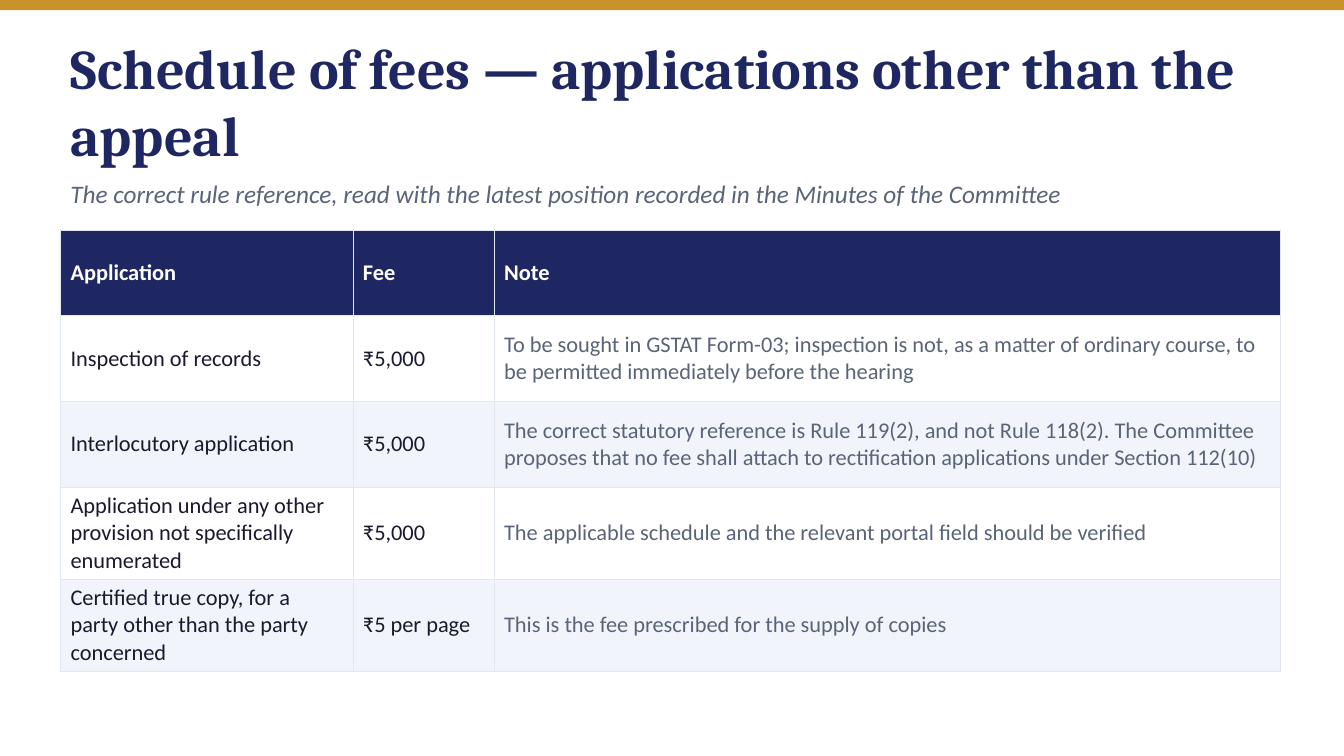
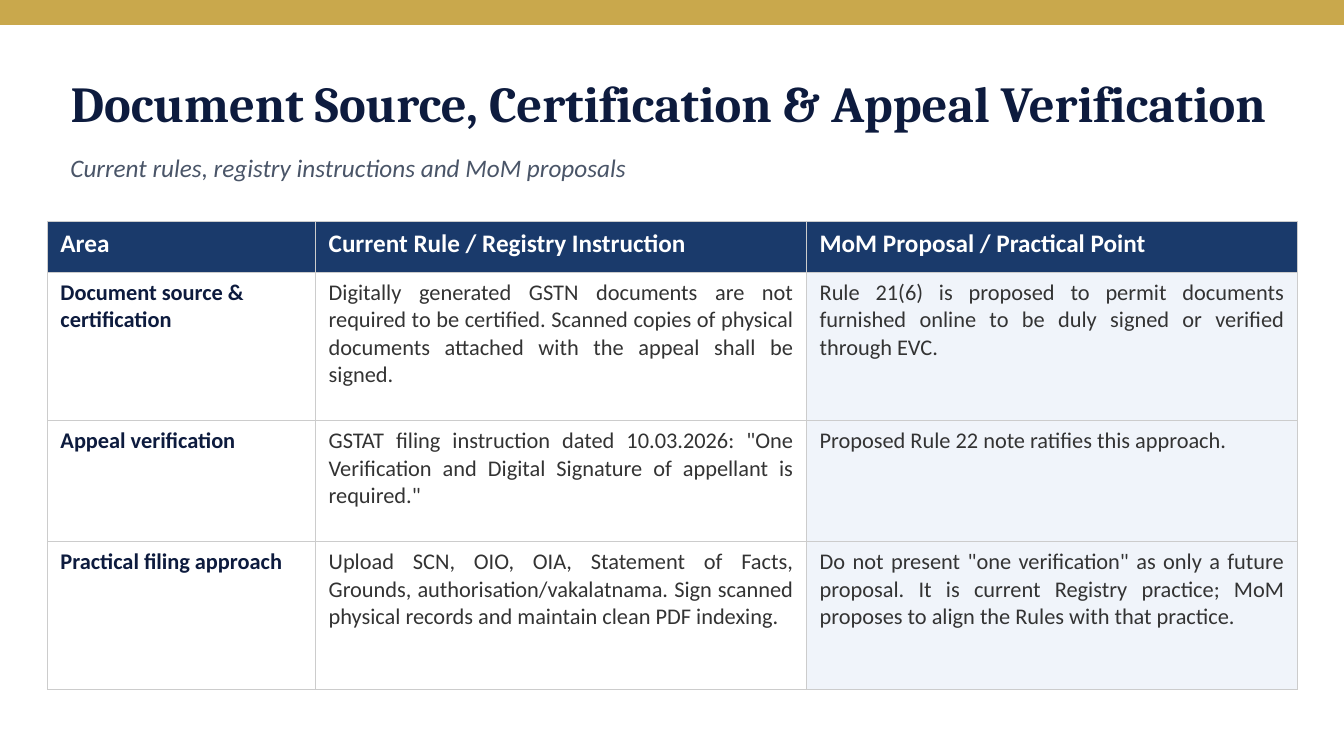
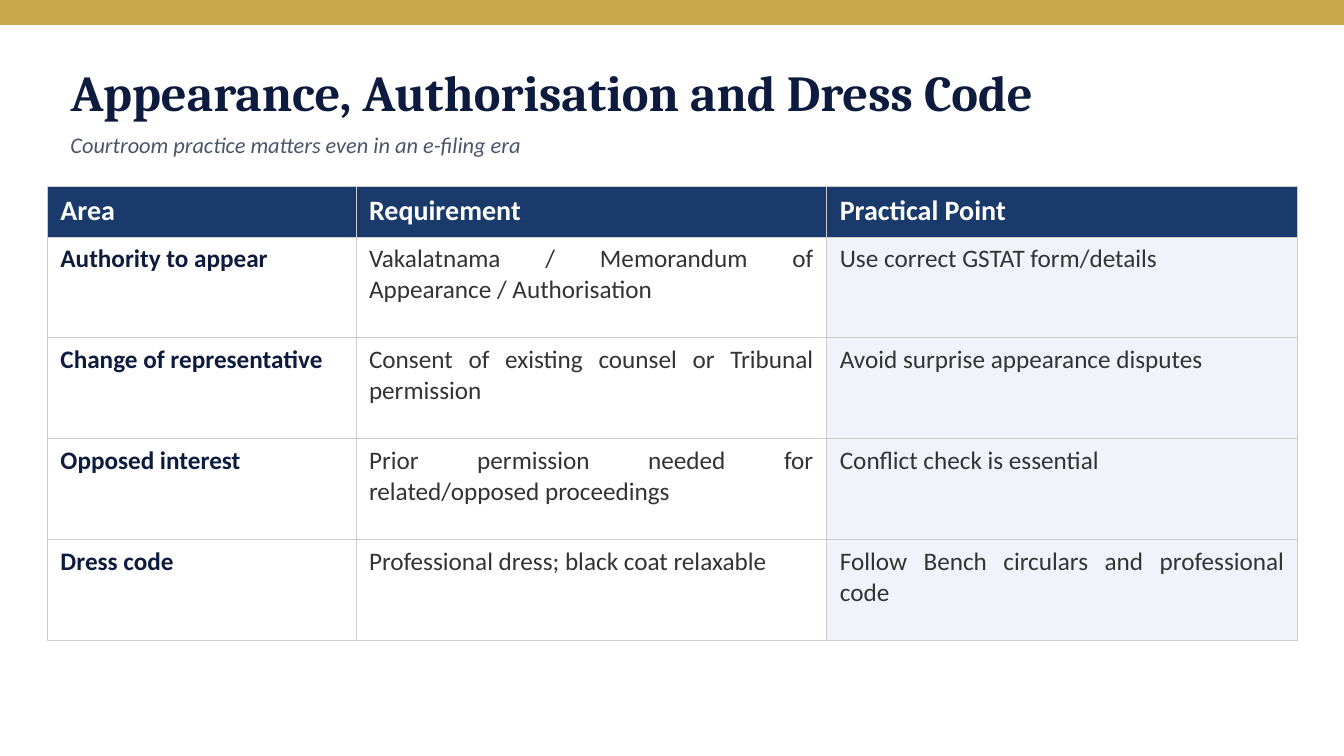
from dataclasses import dataclass, replace

from lxml.etree import SubElement
from pptx import Presentation
from pptx.dml.color import RGBColor
from pptx.enum.shapes import MSO_SHAPE
from pptx.enum.text import MSO_ANCHOR, MSO_AUTO_SIZE, PP_ALIGN
from pptx.oxml.ns import qn
from pptx.util import Inches, Pt

SLIDE_WIDTH, SLIDE_HEIGHT = 13.33, 7.5
TITLE_ONLY_LAYOUT = 5


@dataclass(frozen=True)
class Style:
    band: str
    band_height: float
    band_outlined: bool
    title: str
    subtitle: str
    header: str
    label: str
    body: str
    shade: str
    border: str
    title_size: int
    subtitle_size: int
    header_size: int
    body_size: int
    label_columns: int
    label_bold: bool
    shade_rows: bool
    body_align: PP_ALIGN
    cell_anchor: MSO_ANCHOR
    cell_margins: tuple


@dataclass(frozen=True)
class Theme:
    heading_font: str
    body_font: str
    light: str
    schedule: Style
    guidance: Style
    guidance_large: Style


GUIDANCE = Style(
    band="C9A84C", band_height=0.24, band_outlined=True,
    title="0D1B3E", subtitle="4A5568", header="1A3A6B",
    label="0D1B3E", body="333333", shade="F0F4FA", border="CCCCCC",
    title_size=36, subtitle_size=18, header_size=18, body_size=16,
    label_columns=1, label_bold=True, shade_rows=False,
    body_align=PP_ALIGN.JUSTIFY, cell_anchor=MSO_ANCHOR.TOP,
    cell_margins=(0.13, 0.07),
)

THEME = Theme(
    heading_font="Cambria",
    body_font="Calibri",
    light="FFFFFF",
    schedule=Style(
        band="C8932A", band_height=0.1, band_outlined=False,
        title="1E2761", subtitle="5A6478", header="1E2761",
        label="1A1A2E", body="5A6478", shade="F2F4FB", border="E2E8F0",
        title_size=40, subtitle_size=18, header_size=16, body_size=16,
        label_columns=2, label_bold=False, shade_rows=True,
        body_align=PP_ALIGN.LEFT, cell_anchor=MSO_ANCHOR.MIDDLE,
        cell_margins=(0.1, 0.05),
    ),
    guidance=GUIDANCE,
    guidance_large=replace(GUIDANCE, subtitle_size=16, header_size=20, body_size=18),
)


def set_fill(fill, colour):
    fill.solid()
    fill.fore_color.rgb = RGBColor.from_string(colour)


def write_text(text_frame, text, font_name, size, colour,
               bold=False, italic=False, align=PP_ALIGN.LEFT):
    text_frame.text = text
    text_frame.word_wrap = True
    paragraph = text_frame.paragraphs[0]
    paragraph.alignment = align
    font = paragraph.runs[0].font
    font.name, font.size = font_name, Pt(size)
    font.bold, font.italic = bold, italic
    font.color.rgb = RGBColor.from_string(colour)


def set_borders(cell, colour):
    """Draw a half-point line on all four sides; lines must precede the fill."""
    properties = cell._tc.get_or_add_tcPr()
    for index, side in enumerate(("a:lnL", "a:lnR", "a:lnT", "a:lnB")):
        line = properties.makeelement(qn(side), {"w": str(Pt(0.5))})
        solid = SubElement(line, qn("a:solidFill"))
        SubElement(solid, qn("a:srgbClr"), val=colour)
        properties.insert(index, line)


def add_band(slide, style):
    band = slide.shapes.add_shape(
        MSO_SHAPE.RECTANGLE, 0, 0, Inches(SLIDE_WIDTH), Inches(style.band_height))
    band.shadow.inherit = False
    set_fill(band.fill, style.band)
    if style.band_outlined:
        set_fill(band.line.fill, style.band)
        band.line.width = Pt(1)
    else:
        band.line.fill.background()


def add_heading(slide, style, title, title_box, subtitle, subtitle_box):
    title_shape = slide.shapes.title
    (title_shape.left, title_shape.top,
     title_shape.width, title_shape.height) = map(Inches, title_box)
    subtitle_shape = slide.shapes.add_textbox(*map(Inches, subtitle_box))
    write_text(title_shape.text_frame, title, THEME.heading_font,
               style.title_size, style.title, bold=True)
    write_text(subtitle_shape.text_frame, subtitle, THEME.body_font,
               style.subtitle_size, style.subtitle, italic=True)
    for shape in (title_shape, subtitle_shape):
        shape.text_frame.auto_size = MSO_AUTO_SIZE.NONE
        shape.text_frame.vertical_anchor = MSO_ANCHOR.MIDDLE


def format_cell(cell, text, style, row, column, last_column):
    is_header = row == 0
    is_label = column < style.label_columns
    if is_header:
        size, colour, bold = style.header_size, THEME.light, True
    elif is_label:
        size, colour, bold = style.body_size, style.label, style.label_bold
    else:
        size, colour, bold = style.body_size, style.body, False
    align = PP_ALIGN.LEFT if is_header or is_label else style.body_align
    write_text(cell.text_frame, text, THEME.body_font, size, colour, bold, align=align)

    is_shaded = row % 2 == 0 if style.shade_rows else column == last_column
    body_fill = style.shade if is_shaded else THEME.light
    set_fill(cell.fill, style.header if is_header else body_fill)
    side_margin, end_margin = map(Inches, style.cell_margins)
    cell.margin_left = cell.margin_right = side_margin
    cell.margin_top = cell.margin_bottom = end_margin
    cell.vertical_anchor = style.cell_anchor
    set_borders(cell, style.border)


def add_text_table(slide, style, left, top, column_widths, row_heights, rows):
    frame = slide.shapes.add_table(
        len(rows), len(column_widths), Inches(left), Inches(top),
        Inches(sum(column_widths)), Inches(sum(row_heights)))
    table = frame.table
    table.horz_banding = False
    for column, width in zip(table.columns, column_widths):
        column.width = Inches(width)
    for row, height in zip(table.rows, row_heights):
        row.height = Inches(height)
    for row_index, texts in enumerate(rows):
        for column_index, text in enumerate(texts):
            format_cell(table.cell(row_index, column_index), text, style,
                        row_index, column_index, len(texts) - 1)


def add_table_slide(presentation, style, heading, table):
    slide = presentation.slides.add_slide(presentation.slide_layouts[TITLE_ONLY_LAYOUT])
    set_fill(slide.background.fill, THEME.light)
    add_band(slide, style)
    add_heading(slide, style, **heading)
    add_text_table(slide, style, **table)


def add_fee_schedule(presentation):
    add_table_slide(
        presentation, THEME.schedule,
        heading=dict(
            title="Schedule of fees — applications other than the appeal",
            title_box=(0.6, 0.65, 12, 0.7),
            subtitle="The correct rule reference, read with the latest position "
                     "recorded in the Minutes of the Committee",
            subtitle_box=(0.6, 1.72, 12, 0.4)),
        table=dict(
            left=0.6, top=2.28, column_widths=(2.9, 1.4, 7.8), row_heights=[0.85] * 5,
            rows=(
                ("Application", "Fee", "Note"),
                ("Inspection of records", "₹5,000",
                 "To be sought in GSTAT Form-03; inspection is not, as a matter of "
                 "ordinary course, to be permitted immediately before the hearing"),
                ("Interlocutory application", "₹5,000",
                 "The correct statutory reference is Rule 119(2), and not Rule 118(2). "
                 "The Committee proposes that no fee shall attach to rectification "
                 "applications under Section 112(10)"),
                ("Application under any other provision not specifically enumerated",
                 "₹5,000",
                 "The applicable schedule and the relevant portal field should be verified"),
                ("Certified true copy, for a party other than the party concerned",
                 "₹5 per page", "This is the fee prescribed for the supply of copies"),
            )))


def add_verification(presentation):
    add_table_slide(
        presentation, THEME.guidance,
        heading=dict(
            title="Document Source, Certification & Appeal Verification",
            title_box=(0.6, 0.65, 12.45, 0.73),
            subtitle="Current rules, registry instructions and MoM proposals",
            subtitle_box=(0.6, 1.48, 12.13, 0.37)),
        table=dict(
            left=0.47, top=2.2, column_widths=(2.66, 4.87, 4.87),
            row_heights=(0.5, 1.47, 1.2, 1.47),
            rows=(
                ("Area", "Current Rule / Registry Instruction",
                 "MoM Proposal / Practical Point"),
                ("Document source & certification",
                 "Digitally generated GSTN documents are not required to be certified. "
                 "Scanned copies of physical documents attached with the appeal shall "
                 "be signed.",
                 "Rule 21(6) is proposed to permit documents furnished online to be duly "
                 "signed or verified through EVC."),
                ("Appeal verification",
                 'GSTAT filing instruction dated 10.03.2026: "One Verification and '
                 'Digital Signature of appellant is required."',
                 "Proposed Rule 22 note ratifies this approach."),
                ("Practical filing approach",
                 "Upload SCN, OIO, OIA, Statement of Facts, Grounds, "
                 "authorisation/vakalatnama. Sign scanned physical records and maintain "
                 "clean PDF indexing.",
                 'Do not present "one verification" as only a future proposal. It is '
                 "current Registry practice; MoM proposes to align the Rules with that "
                 "practice."),
            )))


def add_appearance(presentation):
    add_table_slide(
        presentation, THEME.guidance_large,
        heading=dict(
            title="Appearance, Authorisation and Dress Code",
            title_box=(0.6, 0.54, 12.13, 0.73),
            subtitle="Courtroom practice matters even in an e-filing era",
            subtitle_box=(0.6, 1.25, 12.13, 0.37)),
        table=dict(
            left=0.47, top=1.85, column_widths=(3.06, 4.67, 4.67),
            row_heights=[0.5] + [1] * 4,
            rows=(
                ("Area", "Requirement", "Practical Point"),
                ("Authority to appear",
                 "Vakalatnama / Memorandum of Appearance / Authorisation",
                 "Use correct GSTAT form/details"),
                ("Change of representative",
                 "Consent of existing counsel or Tribunal permission",
                 "Avoid surprise appearance disputes"),
                ("Opposed interest",
                 "Prior permission needed for related/opposed proceedings",
                 "Conflict check is essential"),
                ("Dress code", "Professional dress; black coat relaxable",
                 "Follow Bench circulars and professional code"),
            )))


def main():
    presentation = Presentation()
    presentation.slide_width = Inches(SLIDE_WIDTH)
    presentation.slide_height = Inches(SLIDE_HEIGHT)
    add_fee_schedule(presentation)
    add_verification(presentation)
    add_appearance(presentation)
    presentation.save("out.pptx")


if __name__ == "__main__":
    main()
